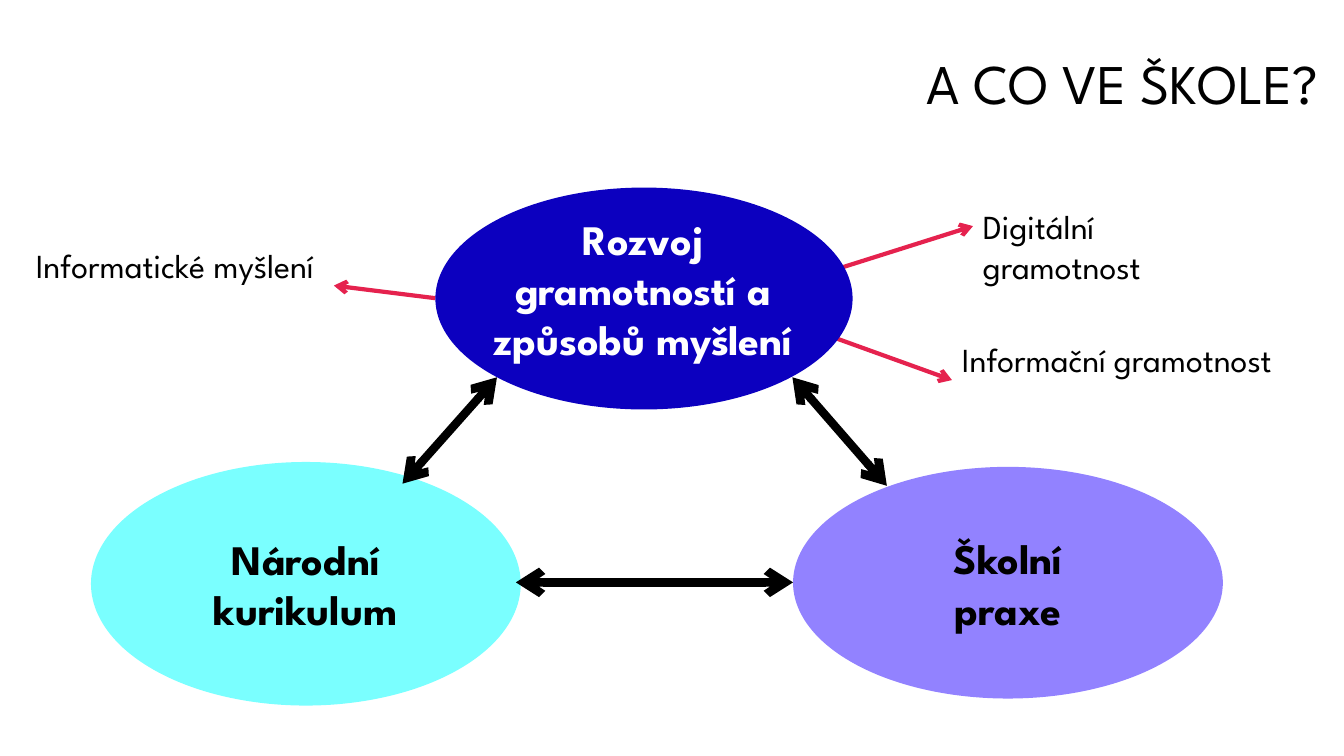
from dataclasses import dataclass

from lxml.etree import SubElement
from pptx import Presentation
from pptx.dml.color import RGBColor
from pptx.enum.shapes import MSO_CONNECTOR, MSO_SHAPE
from pptx.enum.text import MSO_ANCHOR, PP_ALIGN
from pptx.oxml.ns import qn
from pptx.util import Pt


@dataclass(frozen=True)
class Theme:
    """Colours, font and type sizes of the slide."""
    font: str = "League Spartan"
    ink: str = "000000"
    paper: str = "FFFFFF"
    literacy: str = "0C00BF"
    curriculum: str = "7AFFFF"
    practice: str = "9282FF"
    accent: str = "E5224E"
    title_size: int = 40
    node_size: int = 30
    label_size: int = 24


class Diagram:
    """Draws the diagram elements on one slide in one theme."""

    def __init__(self, slide, theme):
        self.slide = slide
        self.theme = theme

    def text(self, words, box, *, size, color=None, bold=False, align=PP_ALIGN.LEFT,
             anchor=MSO_ANCHOR.TOP, inset=3.6, spacing=None, fill=None, parent=None):
        """Add a wrapped text box, optionally filled or inside a group."""
        label = (parent or self.slide).shapes.add_textbox(*map(Pt, box))
        if fill:
            label.fill.solid()
            label.fill.fore_color.rgb = RGBColor.from_string(fill)
        frame = label.text_frame
        frame.word_wrap = True
        frame.vertical_anchor = anchor
        frame.margin_left = frame.margin_right = Pt(7.2)
        frame.margin_top = frame.margin_bottom = Pt(inset)
        paragraph = frame.paragraphs[0]
        paragraph.alignment = align
        if spacing:
            paragraph.line_spacing = spacing
        run = paragraph.add_run()
        run.text = words
        run.font.name = self.theme.font
        run.font.size = Pt(size)
        run.font.bold = bold
        run.font.color.rgb = RGBColor.from_string(color or self.theme.ink)

    def node(self, words, oval_box, text_box, fill, color=None, text_fill=None):
        """Add an ellipse grouped with its centred bold text."""
        node = self.slide.shapes.add_group_shape()
        oval = node.shapes.add_shape(MSO_SHAPE.OVAL, *map(Pt, oval_box))
        oval.shadow.inherit = False
        oval.fill.solid()
        oval.fill.fore_color.rgb = RGBColor.from_string(fill)
        oval.line.fill.background()
        self.text(words, text_box, size=self.theme.node_size, color=color, bold=True,
                  align=PP_ALIGN.CENTER, anchor=MSO_ANCHOR.MIDDLE, inset=7.2,
                  fill=text_fill, parent=node)

    def arrow(self, start, end, color, width, both_ends=False):
        """Add a straight arrow with an open head at one or both ends."""
        arrow = self.slide.shapes.add_connector(
            MSO_CONNECTOR.STRAIGHT, *map(Pt, (*start, *end)))
        arrow.line.width = Pt(width)
        arrow.line.color.rgb = RGBColor.from_string(color)
        properties = arrow.element.spPr
        outline = properties.find(qn("a:ln"))
        for tip in ("a:headEnd", "a:tailEnd") if both_ends else ("a:tailEnd",):
            SubElement(outline, qn(tip)).set("type", "arrow")
        SubElement(properties, qn("a:effectLst"))


def main():
    """Build the slide and save it."""
    deck = Presentation()
    deck.slide_width, deck.slide_height = Pt(960), Pt(540)
    theme = Theme()
    diagram = Diagram(deck.slides.add_slide(deck.slide_layouts[6]), theme)

    for start, end in (((311, 213), (238.5, 204)),
                       ((600, 191.5), (695, 161.5)),
                       ((594, 240.5), (680, 271.5))):
        diagram.arrow(start, end, theme.accent, 3)

    diagram.node("Školní praxe", (566.5, 333.5, 307, 165.5), (633.5, 384.5, 173, 64),
                 theme.practice, text_fill=theme.practice)
    diagram.node("Národní kurikulum", (65, 330, 307, 174), (130.5, 383, 175.5, 67.5),
                 theme.curriculum, text_fill=theme.curriculum)
    diagram.node("Rozvoj gramotností a způsobů myšlení", (311, 134, 298, 158.5),
                 (332.5, 154, 253.5, 104.5), theme.literacy, color=theme.paper)

    for words, left, top, width, align in (
            ("Digitální gramotnost", 695, 143.5, 186.5, PP_ALIGN.LEFT),
            ("Informační gramotnost", 680, 238.5, 244, PP_ALIGN.LEFT),
            ("Informatické myšlení", 11, 171.5, 227.5, PP_ALIGN.CENTER)):
        diagram.text(words, (left, top, width, 65.5), size=theme.label_size, align=align)

    for start, end in (((355, 269.5), (287.5, 345.5)),
                       ((566.5, 416), (368.5, 416)),
                       ((566, 269.5), (633.5, 347))):
        diagram.arrow(start, end, theme.ink, 6, both_ends=True)

    diagram.text("A CO VE ŠKOLE?", (270.5, 11, 678.5, 101.5), size=theme.title_size,
                 align=PP_ALIGN.RIGHT, anchor=MSO_ANCHOR.MIDDLE, spacing=0.9)
    deck.save("out.pptx")


if __name__ == "__main__":
    main()
